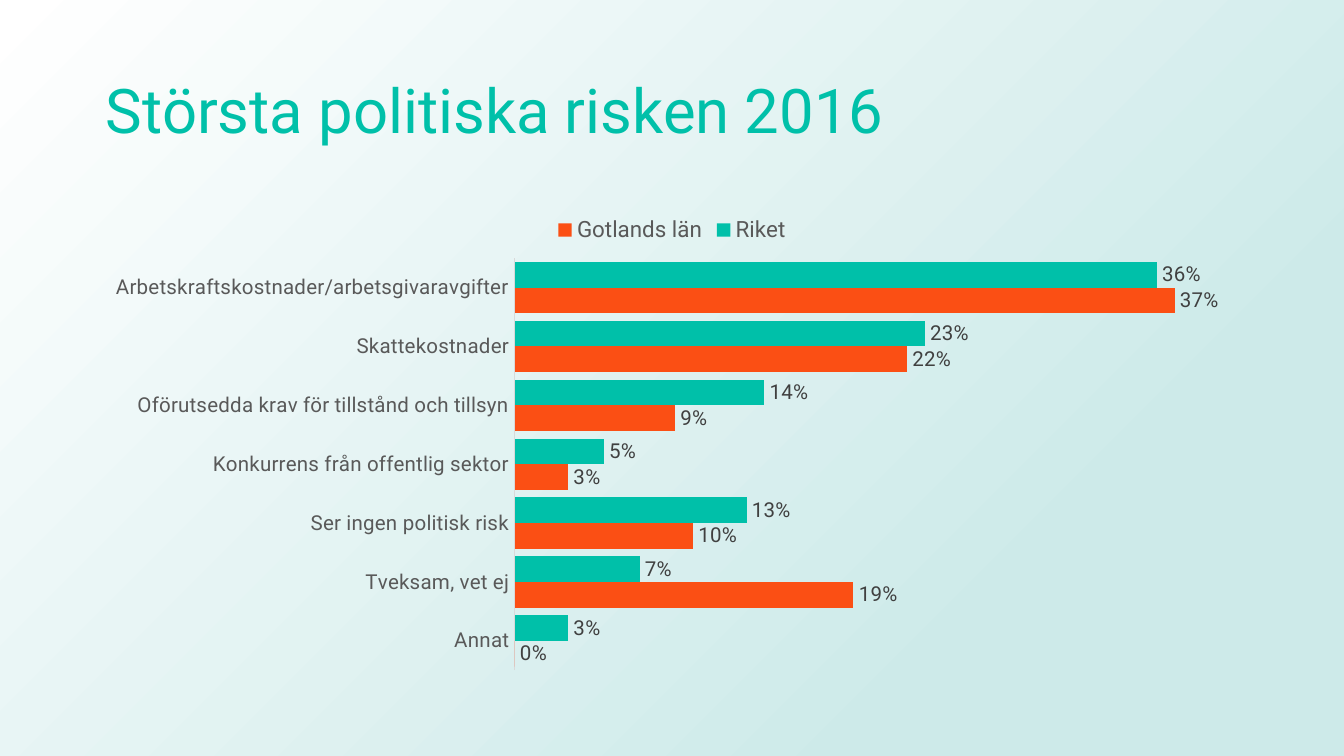
from dataclasses import dataclass

from pptx import Presentation
from pptx.chart.data import CategoryChartData
from pptx.dml.color import RGBColor
from pptx.enum.chart import XL_CHART_TYPE, XL_LABEL_POSITION, XL_LEGEND_POSITION, XL_TICK_MARK
from pptx.enum.shapes import MSO_SHAPE
from pptx.enum.text import MSO_ANCHOR
from pptx.util import Inches, Pt

RECTANGLE = MSO_SHAPE.RECTANGLE
MIDDLE = MSO_ANCHOR.MIDDLE
CLUSTERED_BARS = XL_CHART_TYPE.BAR_CLUSTERED
OUTSIDE_END = XL_LABEL_POSITION.OUTSIDE_END
LEGEND_TOP = XL_LEGEND_POSITION.TOP
NO_TICKS = XL_TICK_MARK.NONE

WIDTH = 10
HEIGHT = WIDTH * 9 / 16
MARGIN = 0.69
CONTENT_WIDTH = WIDTH - 2 * MARGIN

RISKS = {
    "Arbetskraftskostnader/arbetsgivaravgifter": (0.36, 0.37),
    "Skattekostnader": (0.23, 0.22),
    "Oförutsedda krav för tillstånd och tillsyn": (0.14, 0.09),
    "Konkurrens från offentlig sektor": (0.05, 0.03),
    "Ser ingen politisk risk": (0.13, 0.1),
    "Tveksam, vet ej": (0.07, 0.19),
    "Annat": (0.03, 0),
}


@dataclass(frozen=True)
class Theme:
    """Colours, typeface and type sizes of the slide."""
    font: str = "Roboto"
    teal: str = "00C0A9"
    orange: str = "FB4F14"
    mist: str = "CDEAE9"
    white: str = "FFFFFF"
    muted: str = "595959"
    label: str = "404040"
    rule: str = "D9D9D9"
    title_size: int = 33
    legend_size: int = 12
    chart_size: int = 11


THEME = Theme()


def rgb(value):
    """Turn a hex string into a colour."""
    return RGBColor.from_string(value)


def style_font(font, size, color):
    """Set typeface, size and colour of a font."""
    font.name = THEME.font
    font.size = Pt(size)
    font.color.rgb = rgb(color)


def add_backdrop(slide):
    """Cover the slide with a diagonal fade from white to mist."""
    backdrop = slide.shapes.add_shape(RECTANGLE, 0, 0, Inches(WIDTH), Inches(HEIGHT))
    backdrop.shadow.inherit = False
    backdrop.line.fill.background()
    backdrop.fill.gradient()
    backdrop.fill.gradient_angle = 315
    fade = ((0, THEME.white), (0.77, THEME.mist))
    for stop, (position, color) in zip(backdrop.fill.gradient_stops, fade):
        stop.position = position
        stop.color.rgb = rgb(color)


def add_text(slide, text, *, left, top, width, height, size, color, spacing=1.0):
    """Place a wrapped, vertically centred line of text."""
    box = slide.shapes.add_textbox(Inches(left), Inches(top), Inches(width), Inches(height))
    frame = box.text_frame
    frame.word_wrap = True
    frame.vertical_anchor = MIDDLE
    paragraph = frame.paragraphs[0]
    paragraph.line_spacing = spacing
    run = paragraph.add_run()
    run.text = text
    style_font(run.font, size, color)


def style_series(series, color):
    """Colour one series and label its bars with percentages."""
    series.format.fill.solid()
    series.format.fill.fore_color.rgb = rgb(color)
    series.invert_if_negative = False
    labels = series.data_labels
    labels.show_value = True
    labels.number_format = "0%"
    labels.number_format_is_linked = False
    labels.position = OUTSIDE_END
    style_font(labels.font, THEME.chart_size, THEME.label)


def style_axes(chart):
    """List the risks from the top down and hide the value scale."""
    risks = chart.category_axis
    risks.reverse_order = True
    risks.major_tick_mark = NO_TICKS
    risks.minor_tick_mark = NO_TICKS
    risks.has_major_gridlines = False
    risks.format.line.color.rgb = rgb(THEME.rule)
    risks.format.line.width = Pt(0.75)
    style_font(risks.tick_labels.font, THEME.chart_size, THEME.muted)
    shares = chart.value_axis
    shares.minimum_scale = 0
    shares.maximum_scale = 0.4
    shares.has_major_gridlines = False
    shares.visible = False


def add_risk_chart(slide, *, left, top, width, height):
    """Add the bar chart comparing the country with the county."""
    data = CategoryChartData(number_format="0%")
    data.categories = list(RISKS)
    for region, shares in zip(("Riket", "Gotlands län"), zip(*RISKS.values())):
        data.add_series(region, shares)
    chart = slide.shapes.add_chart(
        CLUSTERED_BARS, Inches(left), Inches(top), Inches(width), Inches(height), data
    ).chart
    chart.has_title = False
    style_font(chart.font, THEME.chart_size, THEME.muted)
    chart.has_legend = True
    chart.legend.position = LEGEND_TOP
    chart.legend.include_in_layout = False
    style_font(chart.legend.font, THEME.legend_size, THEME.muted)
    style_axes(chart)
    bars = chart.plots[0]
    bars.gap_width = 30
    bars.overlap = 0
    bars.vary_by_categories = False
    for series, color in zip(bars.series, (THEME.teal, THEME.orange)):
        style_series(series, color)


def main():
    """Build and save the slide."""
    presentation = Presentation()
    presentation.slide_width = Inches(WIDTH)
    presentation.slide_height = Inches(HEIGHT)
    slide = presentation.slides.add_slide(presentation.slide_layouts[6])
    add_backdrop(slide)
    add_text(slide, "Största politiska risken 2016", left=MARGIN, top=0.3,
             width=CONTENT_WIDTH, height=1.09, size=THEME.title_size,
             color=THEME.teal, spacing=0.9)
    add_risk_chart(slide, left=MARGIN, top=1.5, width=CONTENT_WIDTH, height=3.56)
    presentation.save("out.pptx")


if __name__ == "__main__":
    main()
